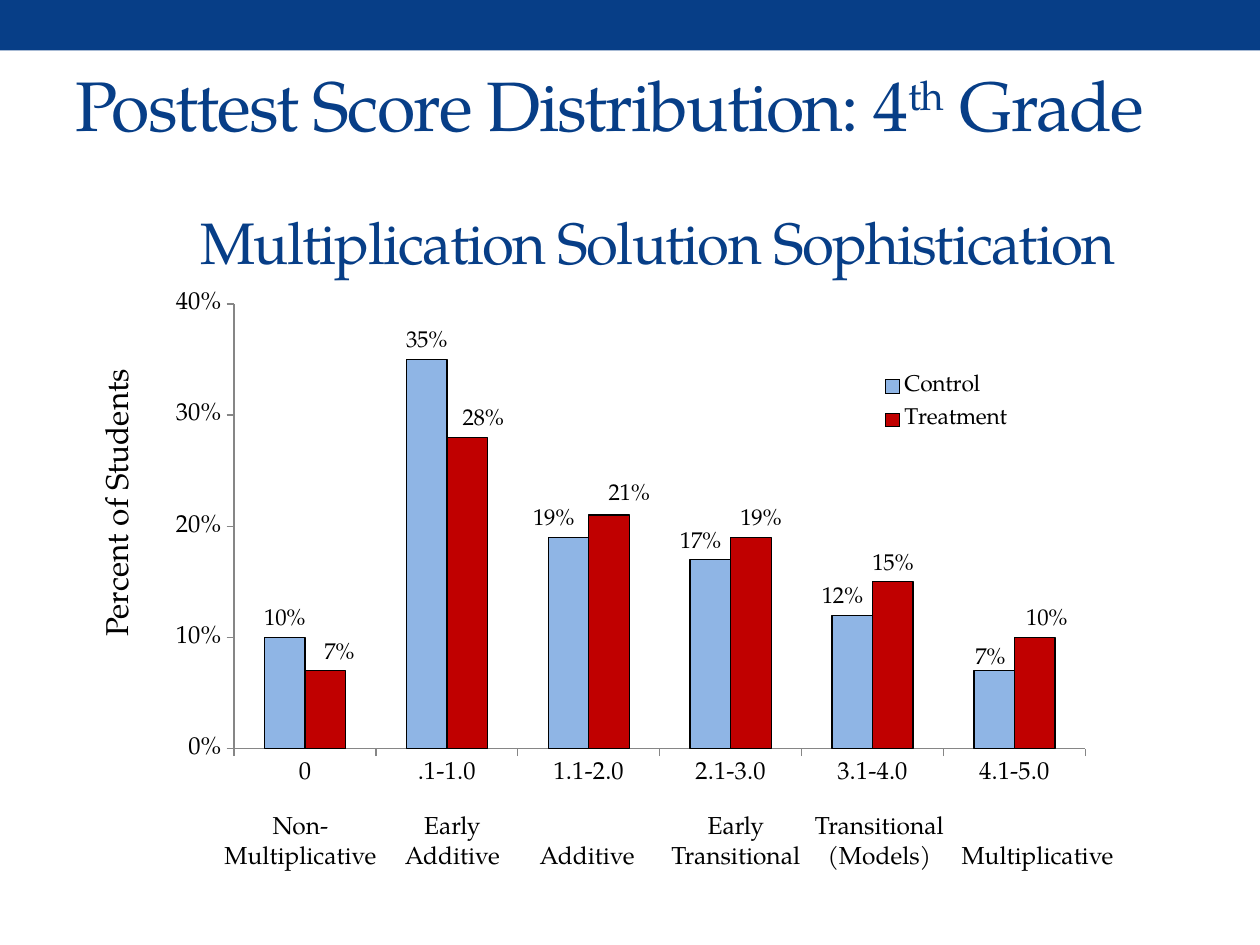
from copy import deepcopy
from dataclasses import dataclass

from pptx import Presentation
from pptx.chart.data import CategoryChartData
from pptx.dml.color import RGBColor
from pptx.enum.chart import XL_CHART_TYPE, XL_LABEL_POSITION, XL_LEGEND_POSITION, XL_TICK_MARK
from pptx.enum.shapes import MSO_SHAPE
from pptx.enum.text import MSO_ANCHOR, PP_ALIGN
from pptx.oxml import parse_xml
from pptx.oxml.ns import qn
from pptx.util import Pt

COLUMN = XL_CHART_TYPE.COLUMN_CLUSTERED
OUTER = XL_LABEL_POSITION.OUTSIDE_END
RIGHT = XL_LEGEND_POSITION.RIGHT
OUT, NONE = XL_TICK_MARK.OUTSIDE, XL_TICK_MARK.NONE
RECT = MSO_SHAPE.RECTANGLE
MIDDLE, BOTTOM, TOP = MSO_ANCHOR.MIDDLE, MSO_ANCHOR.BOTTOM, MSO_ANCHOR.TOP
LEFT, CENTER = PP_ALIGN.LEFT, PP_ALIGN.CENTER
FACE = "TeX Gyre Pagella"
NAVY, BLACK, GRAY = "073E87", "000000", "868686"
NS = 'xmlns:c="http://schemas.openxmlformats.org/drawingml/2006/chart"'


@dataclass
class Label:
    """A text box with its place, size and format in points."""
    runs: tuple
    box: tuple
    size: float
    color: str = BLACK
    align: int = CENTER
    anchor: int = TOP
    wrap: bool = True
    turn: int = 0
    space: int = 0


@dataclass
class Series:
    """A column series with the label shifts of its points."""
    name: str
    vals: tuple
    color: str
    shifts: dict


LEVELS = [
    ("Non-\nMultiplicative", 120.24, 102.96, 41),
    ("Early\nAdditive", 223.2, 70.56, 41),
    ("Additive", 300.24, 70.56, 41),
    ("Early\nTransitional", 375.84, 89.28, 41),
    ("Transitional\n(Models)", 457.92, 89.28, 41),
    ("Multiplicative", 541.44, 102.96, 24.5),
]
LABELS = [
    Label(("Posttest Score Distribution: 4", "th", " Grade"), (36, 20.16, 648, 77.76),
          40, NAVY, LEFT, MIDDLE, space=-100),
    Label(("Multiplication Solution Sophistication",), (92.16, 98.64, 567.36, 77.76),
          33.3, NAVY, anchor=MIDDLE, space=-100),
    Label(("Percent of Students",), (-33.84, 272.88, 200.16, 28.8), 18, turn=270),
] + [
    Label((text,), (left, 500.2 - high, wide, high), 14, anchor=BOTTOM, wrap=False)
    for text, left, wide, high in LEVELS
]
BANDS = ("0", ".1-1.0", "1.1-2.0", "2.1-3.0", "3.1-4.0", "4.1-5.0")
GROUPS = [
    Series("Control", (0.1, 0.35, 0.19, 0.17, 0.12, 0.07), "8FB5E5",
           {2: (-0.015, 0), 3: (-0.01, 0), 4: (-0.01, 0), 5: (-0.004, 0.01)}),
    Series("Treatment", (0.07, 0.28, 0.21, 0.19, 0.15, 0.1), "C00000",
           {0: (0.014, 0), 1: (0.016, 0), 2: (0.02, -0.005), 3: (0.01, 0), 5: (0.012, 0)}),
]


def tint(code: str) -> RGBColor:
    """Turn a hex string into a colour."""
    return RGBColor.from_string(code)


def put(item, **vals) -> None:
    """Set attributes from a dict of values."""
    for key, val in vals.items():
        setattr(item, key, val)


def style(font, size: float, color: str = BLACK) -> None:
    """Give a font its face, size and colour."""
    put(font, name=FACE, size=Pt(size), bold=False)
    font.color.rgb = tint(color)


def layout(x: float, y: float, w: float = 0, h: float = 0, inner: bool = False, edge: bool = True):
    """Make a manual layout in shares of the chart."""
    vals = {"layoutTarget": "inner"} if inner else {}
    if edge:
        vals |= {"xMode": "edge", "yMode": "edge"}
    vals |= {"x": x, "y": y}
    if w:
        vals |= {"w": w, "h": h}
    body = "".join(f'<c:{key} val="{val}"/>' for key, val in vals.items())
    return parse_xml(f"<c:layout {NS}><c:manualLayout>{body}</c:manualLayout></c:layout>")


def place(node, new, after: str = "") -> None:
    """Swap in a layout, after the named child or in front."""
    for old in node.findall(qn("c:layout")):
        node.remove(old)
    if after:
        node.find(qn(after)).addnext(new)
    else:
        node.insert(0, new)


def write(slide, label: Label) -> None:
    """Draw a text label."""
    shape = slide.shapes.add_textbox(*map(Pt, label.box))
    shape.rotation = label.turn
    frame = shape.text_frame
    put(frame, word_wrap=label.wrap, vertical_anchor=label.anchor)
    para = frame.paragraphs[0]
    para.alignment = label.align
    para.text = label.runs[0]
    for text in label.runs[1:]:
        para.add_run().text = text
    for run in para.runs:
        style(run.font, label.size, label.color)
        props = run.font._element
        if label.space:
            props.set("spc", str(label.space))
        if run.text == "th":
            props.set("baseline", "30000")
    for brk in para._p.findall(qn("a:br")):
        brk.insert(0, deepcopy(para.runs[0].font._element))


def paint(series, group: Series) -> None:
    """Format a series and shift its labels."""
    look = series.format
    look.fill.solid()
    look.fill.fore_color.rgb = tint(group.color)
    look.line.color.rgb = tint(BLACK)
    look.line.width = Pt(0.75)
    tags = series.data_labels
    put(tags, show_value=True, number_format="0%", number_format_is_linked=False, position=OUTER)
    style(tags.font, 13)
    for idx, shift in group.shifts.items():
        tag = series.points[idx].data_label
        style(tag.font, 13)
        tag.position = OUTER
        node = next(d for d in tags._element.findall(qn("c:dLbl")) if d.idx_val == idx)
        place(node, layout(*shift, edge=False), "c:idx")
        form = parse_xml(f'<c:numFmt {NS} formatCode="0%" sourceLinked="0"/>')
        node.find(qn("c:layout")).addnext(form)


def plot(slide) -> None:
    """Draw the column chart."""
    data = CategoryChartData(number_format="0%")
    data.categories = BANDS
    for group in GROUPS:
        data.add_series(group.name, group.vals)
    box = map(Pt, (77.76, 156.96, 571.68, 309.6))
    chart = slide.shapes.add_chart(COLUMN, *box, data).chart
    put(chart, has_title=False, has_legend=True)
    style(chart.font, 10)
    place(chart._chartSpace.chart.plotArea, layout(0.098, 0.054, 0.851, 0.821, inner=True))
    put(chart.legend, position=RIGHT, include_in_layout=False)
    style(chart.legend.font, 13)
    place(chart.legend._element, layout(0.725, 0.165, 0.17, 0.145), "c:legendPos")
    put(chart.plots[0], gap_width=150, overlap=0, vary_by_categories=False)
    for axis in (chart.category_axis, chart.value_axis):
        put(axis, major_tick_mark=OUT, minor_tick_mark=NONE, has_major_gridlines=False)
        style(axis.tick_labels.font, 14)
        axis.format.line.color.rgb = tint(GRAY)
    put(chart.value_axis, minimum_scale=0, maximum_scale=0.4, major_unit=0.1)
    put(chart.value_axis.tick_labels, number_format="0%", number_format_is_linked=False)
    for series, group in zip(chart.plots[0].series, GROUPS):
        paint(series, group)


def main() -> None:
    """Build and save the slide."""
    deck = Presentation()
    put(deck, slide_width=Pt(720), slide_height=Pt(540))
    slide = deck.slides.add_slide(deck.slide_layouts[6])
    band = slide.shapes.add_shape(RECT, 0, 0, Pt(720), Pt(28.8))
    band.shadow.inherit = False
    band.fill.solid()
    band.fill.fore_color.rgb = tint(NAVY)
    band.line.fill.background()
    plot(slide)
    for label in LABELS:
        write(slide, label)
    deck.save("out.pptx")


if __name__ == "__main__":
    main()
